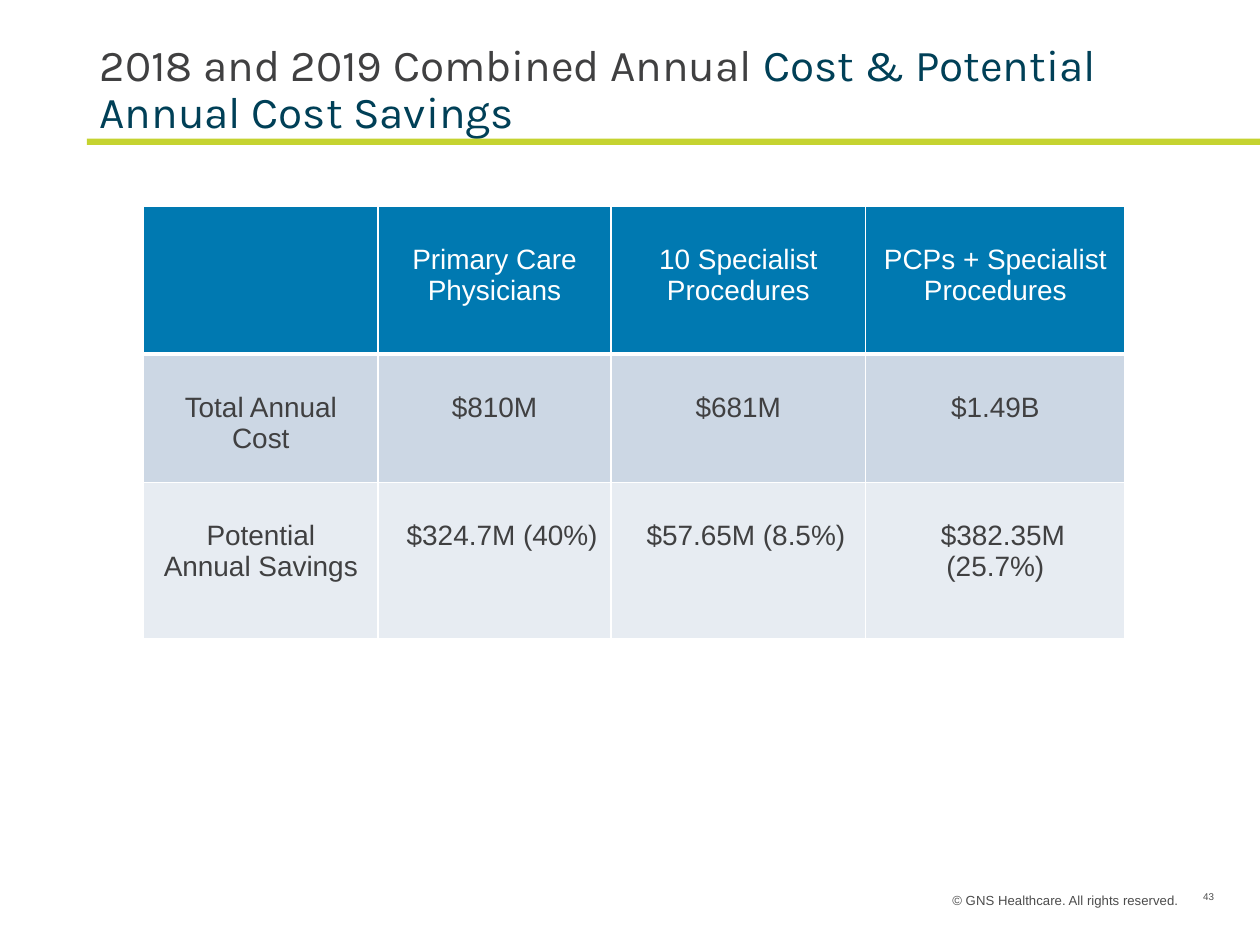
from lxml.etree import SubElement
from pptx import Presentation
from pptx.dml.color import RGBColor
from pptx.enum.shapes import MSO_SHAPE
from pptx.enum.text import MSO_ANCHOR, MSO_AUTO_SIZE, PP_ALIGN
from pptx.oxml.ns import qn
from pptx.util import Inches, Pt

WHITE = RGBColor(0xFF, 0xFF, 0xFF)
LIME = RGBColor(0xC5, 0xD3, 0x30)
NAVY = RGBColor(0x00, 0x40, 0x57)
CHARCOAL = RGBColor(0x40, 0x40, 0x41)
GREY = RGBColor(0x4C, 0x4C, 0x4C)
BLUE = RGBColor(0x00, 0x79, 0xB1)
PALE_BLUE = RGBColor(0xCC, 0xD7, 0xE4)
PALE_GREY = RGBColor(0xE7, 0xEC, 0xF2)

# Content
TITLE_RUNS = [("2018 and 2019 Combined Annual ", CHARCOAL),
              ("Cost & Potential Annual Cost Savings", NAVY)]
ROWS = [
    ["", "Primary Care Physicians", "10 Specialist Procedures",
     "PCPs + Specialist Procedures"],
    ["Total Annual Cost", "$810M", "$681M", "$1.49B"],
    ["Potential\nAnnual Savings", "$324.7M (40%)", "$57.65M (8.5%)",
     "$382.35M (25.7%)"],
]
ROW_STYLES = [(BLUE, WHITE), (PALE_BLUE, CHARCOAL), (PALE_GREY, CHARCOAL)]
COPYRIGHT = "© GNS Healthcare. All rights reserved."
PAGE_NUMBER = "43"

# Layout, in inches
LEFT_MARGIN = 0.69
COLUMN_WIDTHS = [1.86, 1.85, 2.02, 2.06]
ROW_HEIGHTS = [1.17, 1.02, 1.24]
CELL_TOP = 0.3
SAVINGS_INDENT = 0.12


def inches(*lengths):
    return [Inches(length) for length in lengths]


def set_font(font, size, color, name="Arial"):
    font.size, font.name, font.bold = Pt(size), name, False
    font.color.rgb = color


def add_borders(cell, bottom_width):
    properties = cell._tc.get_or_add_tcPr()
    for side, width in (("L", 1), ("R", 1), ("T", 1), ("B", bottom_width)):
        line = SubElement(properties, qn(f"a:ln{side}"), w=str(Pt(width)))
        fill = SubElement(line, qn("a:solidFill"))
        SubElement(fill, qn("a:srgbClr"), val=str(WHITE))


def add_label(slide, box, text, size, align, wrap):
    label = slide.shapes.add_textbox(*inches(*box))
    label.text_frame.word_wrap = wrap
    paragraph = label.text_frame.paragraphs[0]
    paragraph.text, paragraph.alignment = text, align
    set_font(paragraph.font, size, GREY)


def add_title(slide):
    title = slide.shapes.title
    title.left, title.top, title.width, title.height = inches(
        LEFT_MARGIN, 0.29, 8.62, 0.86)
    frame = title.text_frame
    frame.auto_size = MSO_AUTO_SIZE.NONE
    frame.vertical_anchor = MSO_ANCHOR.MIDDLE
    paragraph = frame.paragraphs[0]
    paragraph.alignment, paragraph.line_spacing = PP_ALIGN.LEFT, 0.9
    for text, color in TITLE_RUNS:
        run = paragraph.add_run()
        run.text = text
        set_font(run.font, 25.2, color, "Karla")


def fill_cell(cell, text, fill, color, is_header, is_savings):
    add_borders(cell, 3 if is_header else 1)
    cell.fill.solid()
    cell.fill.fore_color.rgb = fill
    cell.margin_left = cell.margin_right = Inches(0.07)
    cell.margin_top, cell.margin_bottom = inches(CELL_TOP, 0.04)
    cell.text = text
    for paragraph in cell.text_frame.paragraphs:
        paragraph.alignment = PP_ALIGN.CENTER
        set_font(paragraph.font, 16, color)
        if is_savings:  # the first line alone is shifted
            paragraph._p.get_or_add_pPr().set("indent", str(Inches(SAVINGS_INDENT)))


def add_cost_table(slide):
    table = slide.shapes.add_table(
        len(ROWS), len(COLUMN_WIDTHS),
        *inches(1.14, 1.64, sum(COLUMN_WIDTHS), sum(ROW_HEIGHTS))).table
    for column, width in zip(table.columns, COLUMN_WIDTHS):
        column.width = Inches(width)
    for row, height in zip(table.rows, ROW_HEIGHTS):
        row.height = Inches(height)
    last = len(ROWS) - 1
    for i, (texts, (fill, color)) in enumerate(zip(ROWS, ROW_STYLES)):
        for j, text in enumerate(texts):
            fill_cell(table.cell(i, j), text, fill, color, i == 0,
                      i == last and j > 0)


def main():
    presentation = Presentation()
    presentation.slide_width, presentation.slide_height = inches(10, 7.5)
    slide = presentation.slides.add_slide(presentation.slide_layouts[5])

    # Rule under the title, running to the right edge
    rule = slide.shapes.add_shape(
        MSO_SHAPE.RECTANGLE, *inches(LEFT_MARGIN, 1.1, 10 - LEFT_MARGIN, 0.05))
    rule.shadow.inherit = False
    rule.fill.solid()
    rule.fill.fore_color.rgb = LIME
    rule.line.fill.background()

    add_title(slide)
    add_cost_table(slide)

    # Footer
    add_label(slide, (7.45, 7.03, 2, 0.23), COPYRIGHT, 7.5, PP_ALIGN.RIGHT, False)
    add_label(slide, (9.45, 7.02, 0.36, 0.4), PAGE_NUMBER, 5.6, PP_ALIGN.LEFT, True)

    presentation.save("out.pptx")


if __name__ == "__main__":
    main()
